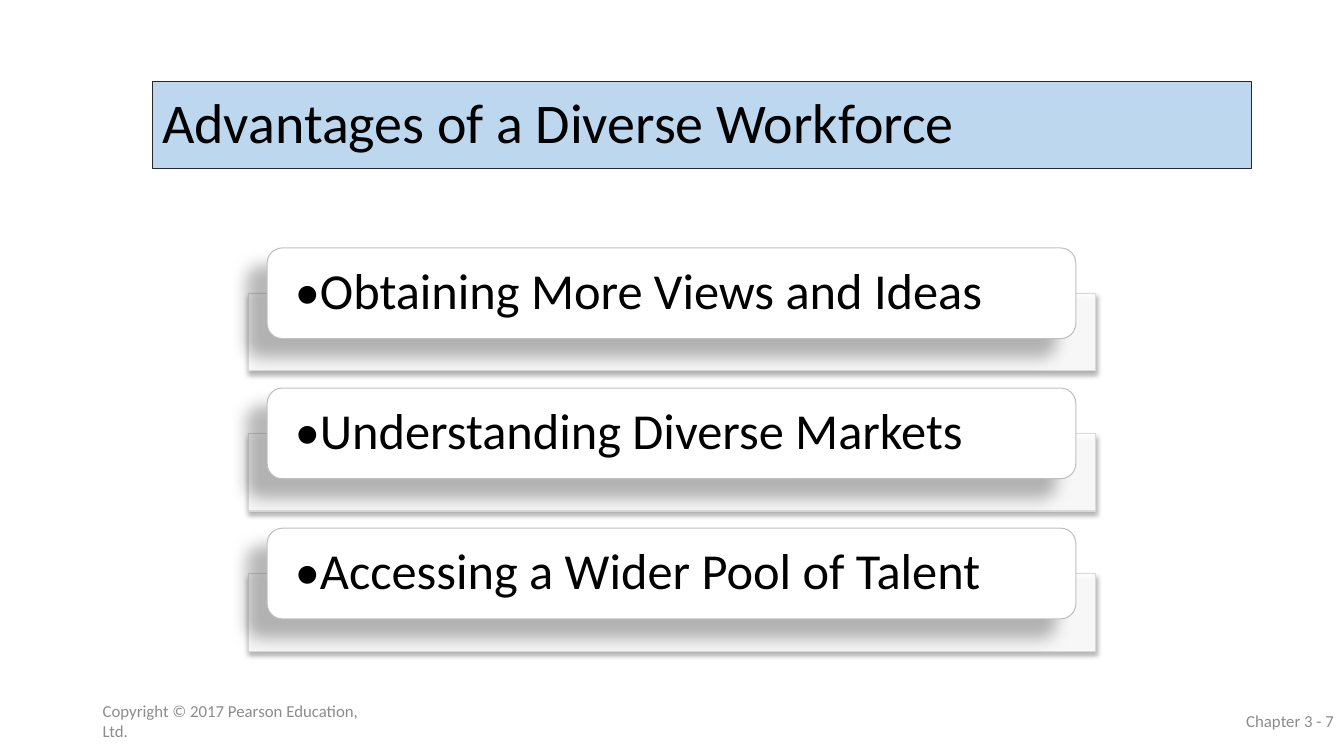
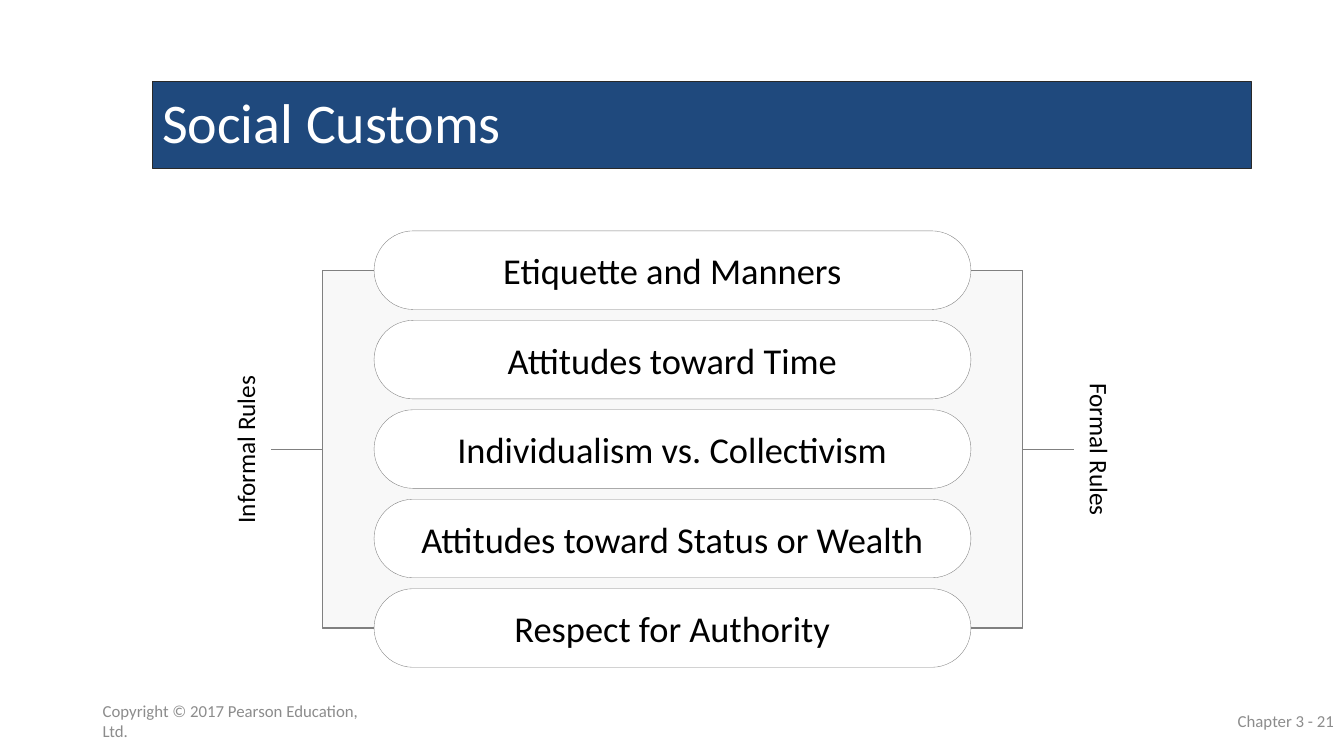
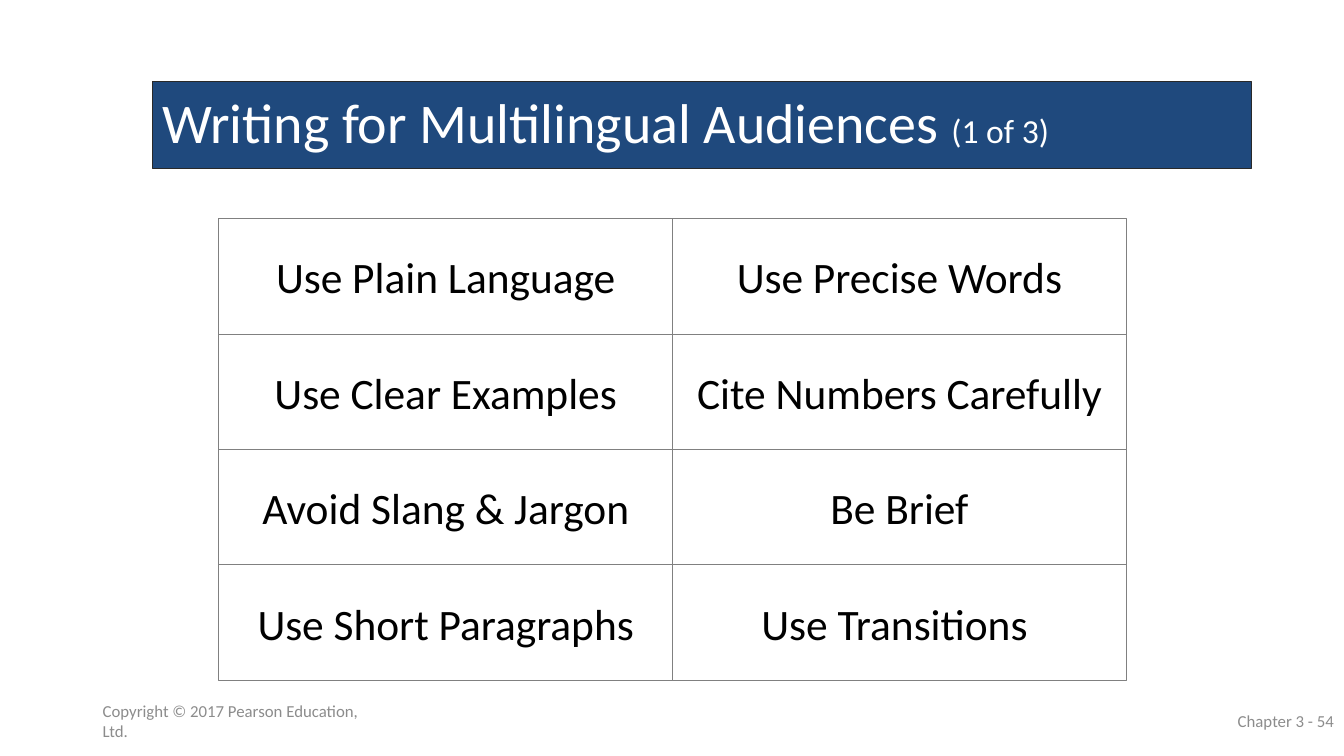
from dataclasses import dataclass

from lxml.etree import SubElement
from pptx import Presentation
from pptx.dml.color import RGBColor
from pptx.enum.shapes import MSO_CONNECTOR as Connector, MSO_SHAPE as Preset
from pptx.enum.text import MSO_ANCHOR as Anchor, PP_ALIGN as Align
from pptx.oxml.ns import qn
from pptx.util import Inches, Pt


@dataclass(frozen=True)
class Theme:
    font: str = "Calibri"
    # Colours
    white: str = "FFFFFF"
    black: str = "000000"
    pale_blue: str = "BDD7EE"
    navy: str = "1F497D"
    panel: str = "F8F8F8"
    band_line: str = "292929"
    grey_line: str = "808080"
    card_line: str = "BFBFBF"
    tray_line: str = "D9D9D9"
    footer: str = "8C8C8C"
    # Type sizes and line widths
    title_size: int = 40
    card_size: int = 36
    cell_size: int = 31
    pill_size: int = 26
    part_size: int = 24
    label_size: int = 18
    footer_size: int = 12
    thin: float = 0.75
    hairline: float = 0.25


THEME = Theme()
COPYRIGHT = "Copyright © 2017 Pearson Education, Ltd."

# Shadows: opacity in percent, blur and distance in points, angle in degrees
TRAY_SHADOW = (32, 3.5, 2.2, 90)
CARD_SHADOW = (28, 11.8, 19.7, 141)


def rgb(colour):
    return RGBColor.from_string(colour)


class Deck:
    def __init__(self):
        self.presentation = Presentation()
        self.presentation.slide_width = Inches(13.33)
        self.presentation.slide_height = Inches(7.5)
        self.slide = None

    def new_slide(self, number, title, band=THEME.navy, colour=THEME.white, part=None):
        """Start a slide with its title band and footers."""
        self.slide = self.presentation.slides.add_slide(self.presentation.slide_layouts[6])
        runs = [(title, THEME.title_size)]
        if part:
            runs.append((part, THEME.part_size))
        title_band = self.box(Preset.RECTANGLE, (1.51, 0.81, 10.9, 0.86), band, THEME.band_line)
        self.put_text(title_band, runs, colour, Align.LEFT, spacing=0.9)
        self.footer(0.92, COPYRIGHT, Align.LEFT)
        self.footer(10.33, f"Chapter 3 - {number}", Align.RIGHT)

    def footer(self, left, text, align):
        shape = self.slide.shapes.add_textbox(*map(Inches, (left, 6.95, 3, 0.4)))
        self.put_text(shape, [(text, THEME.footer_size)], THEME.footer, align)

    def box(self, preset, place, fill=THEME.white, line=None, width=THEME.thin):
        shape = self.slide.shapes.add_shape(preset, *map(Inches, place))
        shape.shadow.inherit = False
        shape.fill.solid()
        shape.fill.fore_color.rgb = rgb(fill)
        if line:
            shape.line.color.rgb = rgb(line)
            shape.line.width = Pt(width)
        else:
            shape.line.fill.background()
        return shape

    def put_text(self, shape, runs, colour=THEME.black, align=Align.CENTER, spacing=None, **frame_format):
        """Put one paragraph in a shape; runs are pairs of text and size."""
        frame = shape.text_frame
        settings = {"word_wrap": True, "vertical_anchor": Anchor.MIDDLE, **frame_format}
        for name, value in settings.items():
            setattr(frame, name, value)
        paragraph = frame.paragraphs[0]
        paragraph.alignment = align
        paragraph.line_spacing = spacing
        for text, size in runs:
            run = paragraph.add_run()
            run.text = text
            for name, value in {"name": THEME.font, "size": Pt(size)}.items():
                setattr(run.font, name, value)
            run.font.color.rgb = rgb(colour)

    def cast_shadow(self, shape, opacity, blur, distance, angle):
        effects = shape._element.spPr.find(qn("a:effectLst"))
        shadow = SubElement(effects, qn("a:outerShdw"), blurRad=str(Pt(blur)), dist=str(Pt(distance)),
                            dir=str(angle * 60000), algn="ctr", rotWithShape="0")
        colour = SubElement(shadow, qn("a:srgbClr"), val=THEME.black)
        SubElement(colour, qn("a:alpha"), val=str(opacity * 1000))

    def card(self, top, text):
        """A rounded card standing in front of a translucent tray."""
        tray = self.box(Preset.RECTANGLE, (2.46, top + 0.45, 8.41, 0.77), line=THEME.tray_line)
        fill_colour = tray._element.spPr.find(qn("a:solidFill")).find(qn("a:srgbClr"))
        SubElement(fill_colour, qn("a:alpha"), val="90000")
        self.cast_shadow(tray, *TRAY_SHADOW)
        card = self.box(Preset.ROUNDED_RECTANGLE, (2.65, top, 8.02, 0.9), line=THEME.card_line)
        self.cast_shadow(card, *CARD_SHADOW)
        self.put_text(card, [(text, THEME.card_size)], align=Align.LEFT, spacing=0.9,
                      margin_left=Inches(0.23), margin_right=Inches(0.23))

    def pill(self, place, text):
        shape = self.box(Preset.ROUNDED_RECTANGLE, place, line=THEME.grey_line, width=THEME.hairline)
        shape.adjustments[0] = 0.5
        self.put_text(shape, [(text, THEME.pill_size)])

    def side_label(self, left, rotation, text):
        shape = self.box(Preset.RECTANGLE, (left, 4.2, 2.4, 0.52))
        shape.rotation = rotation
        self.put_text(shape, [(text, THEME.label_size)])

    def elbow(self, *ends):
        connector = self.slide.shapes.add_connector(Connector.ELBOW, *map(Inches, ends))
        connector.line.color.rgb = rgb(THEME.grey_line)
        connector.line.width = Pt(THEME.thin)
        SubElement(connector._element.spPr, qn("a:effectLst"))

    def cell(self, place, text):
        shape = self.box(Preset.RECTANGLE, place, line=THEME.grey_line)
        self.put_text(shape, [(text, THEME.cell_size)], word_wrap=False)


def advantages(deck):
    deck.new_slide(7, "Advantages of a Diverse Workforce", THEME.pale_blue, THEME.black)
    points = ("•Obtaining More Views and Ideas", "•Understanding Diverse Markets",
              "•Accessing a Wider Pool of Talent")
    for row, point in enumerate(points):
        deck.card(2.46 + row * 1.39, point)


def social_customs(deck):
    deck.new_slide(21, "Social Customs")
    customs = ("Etiquette and Manners", "Attitudes toward Time", "Individualism vs. Collectivism",
               "Attitudes toward Status or Wealth", "Respect for Authority")
    left, top, width, height = 3.71, 2.29, 5.92, 0.78
    pitch = (5.84 - top) / (len(customs) - 1)
    first = top + height / 2
    last = first + pitch * (len(customs) - 1)

    # Panel behind the pills, from the middle of the first to that of the last
    deck.box(Preset.RECTANGLE, (3.2, first, 6.94, last - first), THEME.panel, THEME.grey_line)
    for row, custom in enumerate(customs):
        deck.pill((left, top + row * pitch, width, height), custom)

    # Labels on both sides, each joined to the first and last pill
    sides = ((1.23, 270, "Informal Rules", 2.69, left),
             (9.71, 90, "Formal Rules", 10.65, left + width))
    for label_left, rotation, text, start, end in sides:
        deck.side_label(label_left, rotation, text)
        for middle in (first, last):
            deck.elbow(start, (first + last) / 2, end, middle)


def multilingual_audiences(deck):
    deck.new_slide(54, "Writing for Multilingual Audiences ", part="(1 of 3)")
    rows = (("Use Plain Language", "Use Precise Words"),
            ("Use Clear Examples", "Cite Numbers Carefully"),
            ("Avoid Slang & Jargon", "Be Brief"),
            ("Use Short Paragraphs", "Use Transitions "))
    width, height = 4.5, 4.58 / len(rows)
    for row, texts in enumerate(rows):
        for column, text in enumerate(texts):
            deck.cell((2.17 + column * width, 2.17 + row * height, width, height), text)


def main():
    deck = Deck()
    for build in (advantages, social_customs, multilingual_audiences):
        build(deck)
    deck.presentation.save("out.pptx")


if __name__ == "__main__":
    main()
